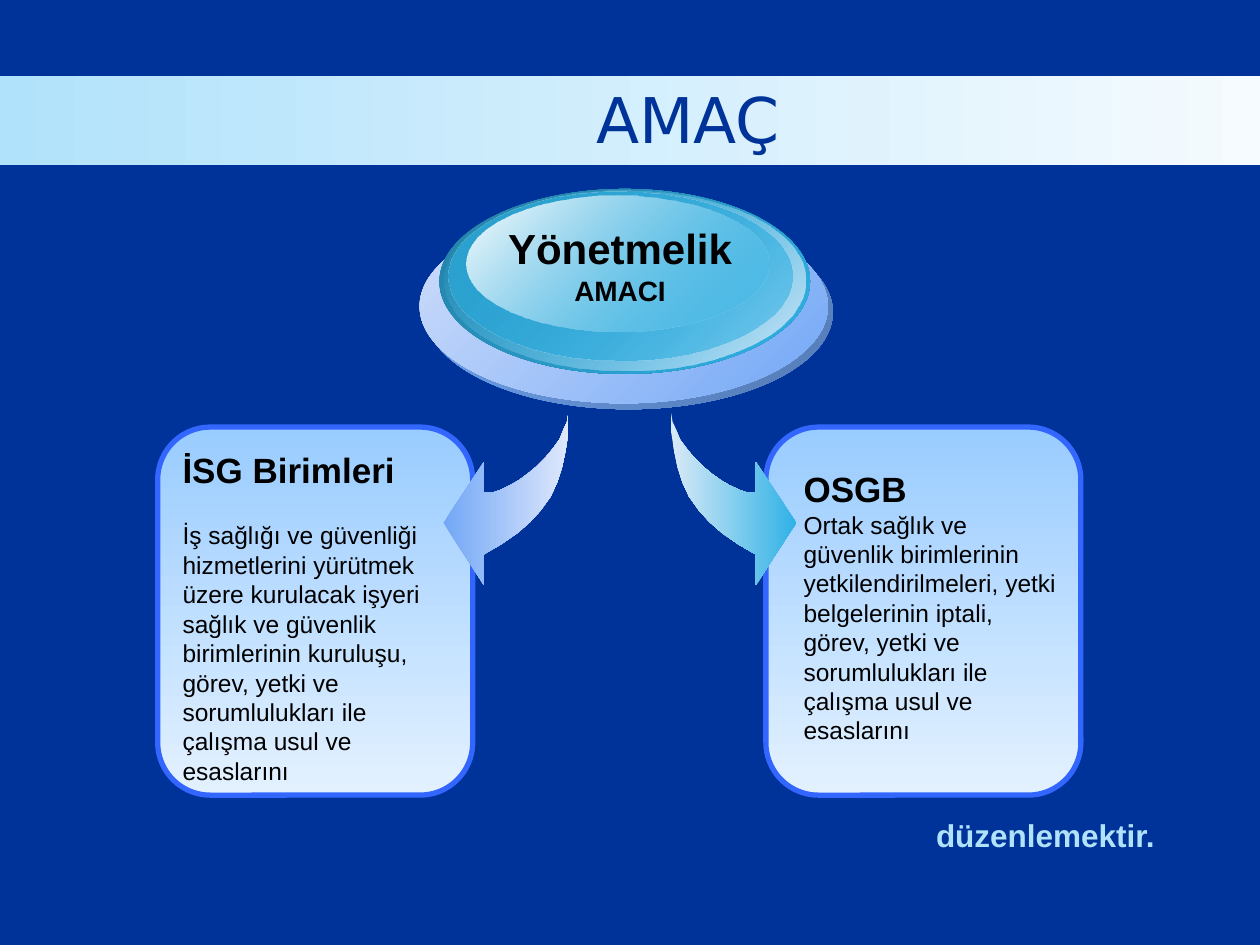
from pptx import Presentation
from pptx.dml.color import RGBColor
from pptx.enum.shapes import MSO_SHAPE
from pptx.enum.text import MSO_ANCHOR, PP_ALIGN
from pptx.oxml.ns import qn
from pptx.util import Cm, Pt
from lxml.etree import SubElement

NAVY = RGBColor(0x00, 0x33, 0x99)
BLACK = RGBColor(0x00, 0x00, 0x00)
WHITE = RGBColor(0xFF, 0xFF, 0xFF)
PALE_CYAN = RGBColor(0xB1, 0xE2, 0xFB)
BAND_END = RGBColor(0xF5, 0xFB, 0xFE)
CARD_TOP = RGBColor(0x99, 0xCC, 0xFF)
CARD_BOTTOM = RGBColor(0xE3, 0xF1, 0xFF)
CARD_BORDER = RGBColor(0x33, 0x66, 0xFF)
BLUE = RGBColor(0x72, 0xA7, 0xF6)
BLUE_LIGHT = RGBColor(0xDF, 0xE8, 0xFC)
BLUE_PALE = RGBColor(0xD0, 0xDE, 0xFB)
BLUE_SHADE = RGBColor(0x53, 0x7A, 0xB4)
CYAN = RGBColor(0x30, 0xB2, 0xE6)
CYAN_DARK = RGBColor(0x22, 0x7F, 0xA5)
CYAN_MEDIUM = RGBColor(0x2B, 0xA1, 0xD0)
CYAN_LIGHT = RGBColor(0xD5, 0xE8, 0xF7)
CYAN_PALE = RGBColor(0xD9, 0xEA, 0xF7)

# Left arrow outline in centimetres; the right arrow mirrors it
ARROW = [
    (11.46, 8.33), (11.46, 8.71), (11.4, 9.09), (11.33, 9.42), (11.23, 9.73),
    (11.1, 10.01), (10.9, 10.29), (10.69, 10.52), (10.44, 10.74), (10.11, 10.97),
    (9.75, 11.18), (9.75, 11.79), (8.94, 10.54), (9.75, 9.32), (9.75, 9.93),
    (9.93, 9.93), (10.08, 9.88), (10.29, 9.78), (10.46, 9.68), (10.64, 9.55),
    (10.82, 9.4), (11, 9.22), (11.15, 9.04), (11.28, 8.86), (11.35, 8.69),
    (11.43, 8.51),
]
MIRROR_SUM = 24.99

# Medallion layers, back to front: position, start and end colour, opacities
MEDALLION = [
    ((8.56, 4.34, 8.23, 3.91), BLUE, BLUE_SHADE, (100, 100)),
    ((8.46, 4.22, 8.23, 3.91), BLUE_PALE, BLUE, (100, 100)),
    ((8.86, 3.81, 7.47, 3.73), CYAN_DARK, CYAN, (100, 100)),
    ((8.97, 3.84, 7.26, 3.63), CYAN, CYAN_LIGHT, (0, 100)),
    ((9.04, 3.86, 6.93, 3.4), CYAN_MEDIUM, CYAN, (100, 48)),
    ((9.4, 3.94, 6.1, 2.74), WHITE, CYAN, (100, 38)),
]

LEFT_TEXT = (
    "İş sağlığı ve güvenliği hizmetlerini yürütmek üzere kurulacak işyeri "
    "sağlık ve güvenlik birimlerinin kuruluşu, görev, yetki ve "
    "sorumlulukları ile çalışma usul ve esaslarını"
)
RIGHT_TEXT = (
    "Ortak sağlık ve güvenlik birimlerinin yetkilendirilmeleri, yetki "
    "belgelerinin iptali, görev, yetki ve sorumlulukları ile çalışma usul "
    "ve esaslarını"
)


class SlideBuilder:
    font = "Arial"

    def __init__(self, page):
        self.page = page

    def paint(self, shape, start, end, angle, opacities=(100, 100)):
        """Fill with a two-stop gradient; the angle runs clockwise."""
        shape.shadow.inherit = False
        shape.line.fill.background()
        shape.fill.gradient()
        shape.fill.gradient_angle = -angle % 360
        for stop, color, position in zip(shape.fill.gradient_stops, (start, end), (0, 1)):
            stop.color.rgb = color
            stop.position = position
        colors = shape.element.spPr.iter(qn("a:srgbClr"))
        for color, opacity in zip(colors, opacities):
            if opacity < 100:
                SubElement(color, qn("a:alpha")).set("val", str(opacity * 1000))

    def shape(self, kind, place, start, end, angle=0, opacities=(100, 100)):
        shape = self.page.shapes.add_shape(kind, *map(Cm, place))
        self.paint(shape, start, end, angle, opacities)
        return shape

    def card(self, place):
        card = self.shape(MSO_SHAPE.ROUNDED_RECTANGLE, place, CARD_TOP, CARD_BOTTOM, 90)
        card.adjustments[0] = 0.167
        card.line.color.rgb = CARD_BORDER
        card.line.width = Pt(3)

    def arrow(self, points, start, end):
        first, *rest = [(Cm(x), Cm(y)) for x, y in points]
        builder = self.page.shapes.build_freeform(*first)
        builder.add_line_segments(rest, close=True)
        self.paint(builder.convert_to_shape(), start, end, 0)

    def text(self, place, lines, color=BLACK, align=PP_ALIGN.LEFT, wrap=True,
             font=font, anchor=MSO_ANCHOR.TOP, gap=0):
        """Each line is (text, size, bold); gap separates the paragraphs."""
        box = self.page.shapes.add_textbox(*map(Cm, place))
        frame = box.text_frame
        frame.word_wrap = wrap
        frame.vertical_anchor = anchor
        for index, (words, size, bold) in enumerate(lines):
            para = frame.add_paragraph() if index else frame.paragraphs[0]
            para.text = words
            para.alignment = align
            if index and gap:
                para.space_before = Pt(gap)
            para.font.name = font
            para.font.size = Pt(size)
            para.font.bold = bold
            para.font.color.rgb = color


def main():
    deck = Presentation()
    deck.slide_width, deck.slide_height = Cm(25.4), Cm(19.05)
    page = deck.slides.add_slide(deck.slide_layouts[6])
    page.background.fill.solid()
    page.background.fill.fore_color.rgb = NAVY
    builder = SlideBuilder(page)

    # Title band
    builder.shape(MSO_SHAPE.RECTANGLE, (0, 1.53, 25.4, 1.8), PALE_CYAN, BAND_END)
    builder.text((5.51, 1.6, 16.71, 1.57), [("AMAÇ", 36, False)], NAVY,
                 PP_ALIGN.CENTER, font="DejaVu Sans", anchor=MSO_ANCHOR.MIDDLE)

    # Left card and its arrow
    builder.card((3.18, 8.61, 6.35, 7.42))
    builder.text((3.43, 8.92, 5.66, 7.09),
                 [("İSG Birimleri", 20, True), (LEFT_TEXT, 14, False)], gap=17)
    builder.arrow(ARROW, BLUE, BLUE_LIGHT)

    # Medallion
    for place, start, end, opacities in MEDALLION:
        builder.shape(MSO_SHAPE.OVAL, place, start, end, 45, opacities)
    builder.text((9.96, 4.37, 5.08, 1.96),
                 [("Yönetmelik", 24, True), ("AMACI", 16, True)],
                 align=PP_ALIGN.CENTER, wrap=False)

    # Right card and its arrow
    builder.card((15.44, 8.61, 6.35, 7.42))
    builder.text((15.95, 9.3, 5.66, 5.89),
                 [("OSGB", 20, True), (RIGHT_TEXT, 14, False)])
    builder.arrow([(MIRROR_SUM - x, y) for x, y in ARROW], CYAN_PALE, CYAN)

    # Closing word
    builder.text((18.62, 16.33, 4.95, 1.02), [("düzenlemektir.", 18, True)],
                 PALE_CYAN, wrap=False)

    deck.save("out.pptx")


if __name__ == "__main__":
    main()
